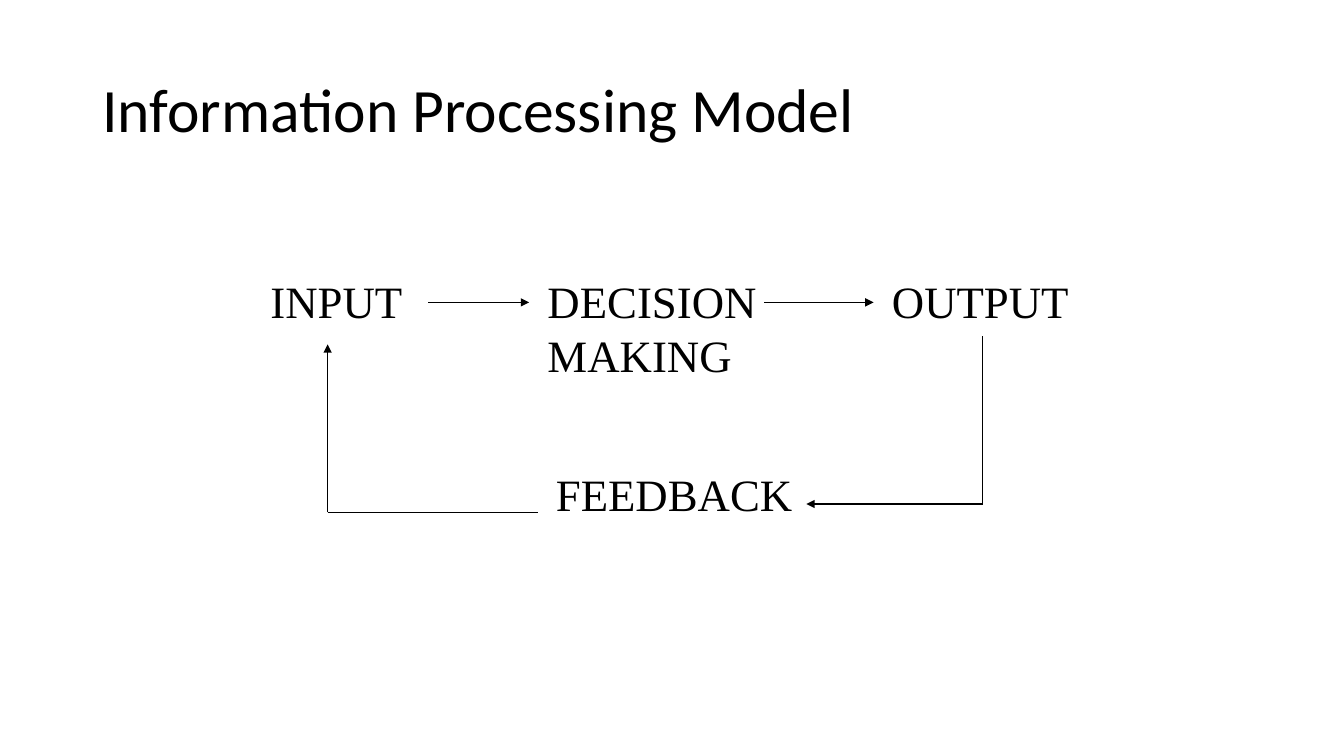
from dataclasses import dataclass

from pptx import Presentation
from pptx.dml.color import RGBColor
from pptx.enum.shapes import MSO_CONNECTOR
from pptx.enum.text import MSO_ANCHOR, MSO_AUTO_SIZE, PP_ALIGN
from pptx.oxml.xmlchemy import OxmlElement
from pptx.slide import Slide
from pptx.text.text import TextFrame
from pptx.util import Pt

STRAIGHT = MSO_CONNECTOR.STRAIGHT
MIDDLE, TOP = MSO_ANCHOR.MIDDLE, MSO_ANCHOR.TOP
LEFT = PP_ALIGN.LEFT
FIT_SHAPE, NO_FIT = MSO_AUTO_SIZE.SHAPE_TO_FIT_TEXT, MSO_AUTO_SIZE.NONE

EMU_PER_PX = 9525  # 96 px to the inch
TITLE_ONLY = 5
BLACK = "000000"


@dataclass(frozen=True)
class Stage:
    label: str
    left: int
    top: int
    width: int
    height: int = 60


@dataclass(frozen=True)
class Flow:
    start: tuple[int, int]
    end: tuple[int, int]
    arrow: bool = True


STAGES = [
    Stage("INPUT", 248, 256, 224),
    Stage("DECISION MAKING", 512, 256, 232, 112),
    Stage("OUTPUT", 840, 256, 224),
    Stage("FEEDBACK", 520, 440, 248),
]

FLOWS = [
    # Forward path
    Flow((408, 288), (504, 288)),
    Flow((728, 288), (832, 288)),
    # Feedback to input
    Flow((312, 488), (312, 328)),
    Flow((312, 488), (512, 488), arrow=False),
    # Output to feedback
    Flow((936, 480), (768, 480)),
    Flow((936, 480), (936, 320), arrow=False),
]


def px(*lengths: int) -> list[int]:
    return [length * EMU_PER_PX for length in lengths]


def color(value: str) -> RGBColor:
    return RGBColor.from_string(value)


def write_text(frame: TextFrame, text: str, *, font: str, size: int,
               fill: str = BLACK, anchor: MSO_ANCHOR = TOP,
               fit: MSO_AUTO_SIZE = NO_FIT, line_spacing: float = 1.0,
               space_before: int = 0) -> None:
    """Write one paragraph; space_before is a percentage of the line."""
    frame.word_wrap = True
    frame.auto_size = fit
    frame.vertical_anchor = anchor
    paragraph = frame.paragraphs[0]
    paragraph.alignment = LEFT
    paragraph.line_spacing = line_spacing
    if space_before:
        before = OxmlElement("a:spcBef")
        percent = OxmlElement("a:spcPct")
        percent.set("val", str(space_before * 1000))
        before.append(percent)
        paragraph.alignment = LEFT
        paragraph._p.get_or_add_pPr().append(before)
    run = paragraph.add_run()
    run.text = text
    run.font.name = font
    run.font.size = Pt(size)
    run.font.color.rgb = color(fill)


def add_title(slide: Slide, text: str) -> None:
    title = slide.shapes.title
    title.left, title.top, title.width, title.height = px(88, 38, 1104, 139)
    write_text(title.text_frame, text, font="Calibri", size=44,
               anchor=MIDDLE, line_spacing=0.9)


def add_stage(slide: Slide, stage: Stage) -> None:
    box = slide.shapes.add_textbox(
        *px(stage.left, stage.top, stage.width, stage.height))
    write_text(box.text_frame, stage.label, font="Times New Roman", size=32,
               fit=FIT_SHAPE, space_before=50)


def add_flow(slide: Slide, flow: Flow) -> None:
    line = slide.shapes.add_connector(STRAIGHT, *px(*flow.start, *flow.end))
    line.line.color.rgb = color(BLACK)
    line.line.width = Pt(0.75)
    if flow.arrow:
        tip = OxmlElement("a:tailEnd")
        tip.set("type", "triangle")
        line.line._get_or_add_ln().append(tip)
    line._element.spPr.append(OxmlElement("a:effectLst"))


def main() -> None:
    presentation = Presentation()
    presentation.slide_width, presentation.slide_height = px(1280, 720)
    slide = presentation.slides.add_slide(
        presentation.slide_layouts[TITLE_ONLY])
    add_title(slide, "Information Processing Model")
    for stage in STAGES:
        add_stage(slide, stage)
    for flow in FLOWS:
        add_flow(slide, flow)
    presentation.save("out.pptx")


if __name__ == "__main__":
    main()
